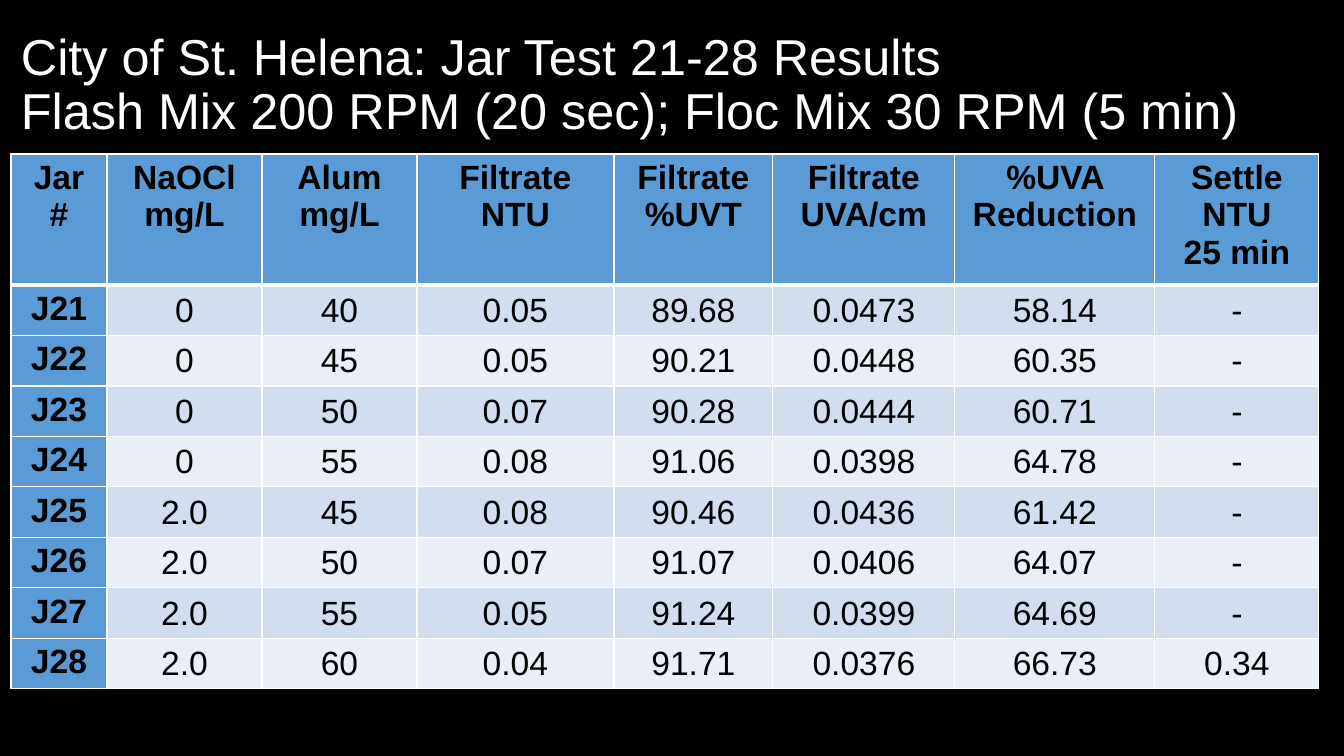
from lxml import etree
from pptx import Presentation
from pptx import util as u
from pptx.dml.color import RGBColor
from pptx.enum import text
from pptx.oxml.ns import qn

TITLE = ("City of St. Helena: Jar Test 21-28 Results\v"
         "Flash Mix 200 RPM (20 sec); Floc Mix 30 RPM (5 min)")
HEADERS = ("Jar\n#", "NaOCl\nmg/L", "Alum\nmg/L", "Filtrate\nNTU", "Filtrate\n%UVT",
           "Filtrate\nUVA/cm", "%UVA Reduction", "Settle\nNTU\n25 min")
RESULTS = [
    ("J21", "0", "40", "0.05", "89.68", "0.0473", "58.14", "-"),
    ("J22", "0", "45", "0.05", "90.21", "0.0448", "60.35", "-"),
    ("J23", "0", "50", "0.07", "90.28", "0.0444", "60.71", "-"),
    ("J24", "0", "55", "0.08", "91.06", "0.0398", "64.78", "-"),
    ("J25", "2.0", "45", "0.08", "90.46", "0.0436", "61.42", "-"),
    ("J26", "2.0", "50", "0.07", "91.07", "0.0406", "64.07", "-"),
    ("J27", "2.0", "55", "0.05", "91.24", "0.0399", "64.69", "-"),
    ("J28", "2.0", "60", "0.04", "91.71", "0.0376", "66.73", "0.34"),
]
COLUMN_WIDTHS = (96, 155, 155, 197, 159, 182, 200, 164)
HEADER_HEIGHT, ROW_HEIGHT = 122, 47
TITLE_BOX = (11, 13, 1290, 146)
TABLE_LEFT, TABLE_TOP = 11, 154

FONT = "Arial"
BLACK = RGBColor(0x00, 0x00, 0x00)
WHITE = RGBColor(0xFF, 0xFF, 0xFF)
BLUE = RGBColor(0x5B, 0x9B, 0xD5)
BANDS = (RGBColor(0xD2, 0xDE, 0xEF), RGBColor(0xEA, 0xEF, 0xF7))


def px(length):
    return u.Inches(length / 100.8)


def style_runs(frame, size, color, bold=False):
    for paragraph in frame.paragraphs:
        for run in paragraph.runs:
            run.font.name = FONT
            run.font.size = u.Pt(size)
            run.font.bold = bold
            run.font.color.rgb = color


def set_borders(cell, top, bottom):
    properties = cell._tc.get_or_add_tcPr()
    for side, points in (("lnL", 1), ("lnR", 1), ("lnT", top), ("lnB", bottom)):
        line = etree.SubElement(properties, qn(f"a:{side}"), w=str(u.Pt(points)))
        fill = etree.SubElement(line, qn("a:solidFill"))
        etree.SubElement(fill, qn("a:srgbClr"), val=str(WHITE))


def add_title(slide):
    frame = slide.shapes.add_textbox(*map(px, TITLE_BOX)).text_frame
    frame.word_wrap = True
    frame.vertical_anchor = text.MSO_ANCHOR.MIDDLE
    frame.text = TITLE
    frame.paragraphs[0].line_spacing = 0.9
    style_runs(frame, 36, WHITE)


def fill_cell(cell, value, row, column):
    is_label = row == 0 or column == 0
    cell.text_frame.text = value
    for paragraph in cell.text_frame.paragraphs:
        paragraph.alignment = text.PP_ALIGN.CENTER
    style_runs(cell.text_frame, 24, BLACK, bold=is_label)
    if not is_label:
        cell.vertical_anchor = text.MSO_ANCHOR.MIDDLE
        cell.margin_left = cell.margin_right = cell.margin_top = px(1)
        cell.margin_bottom = 0
    set_borders(cell, top=3 if row == 1 else 1, bottom=3 if row == 0 else 1)
    cell.fill.solid()
    cell.fill.fore_color.rgb = BLUE if is_label else BANDS[(row - 1) % 2]


def add_results(slide):
    rows = [HEADERS, *RESULTS]
    heights = [HEADER_HEIGHT] + [ROW_HEIGHT] * len(RESULTS)
    table = slide.shapes.add_table(
        len(rows), len(HEADERS), px(TABLE_LEFT), px(TABLE_TOP),
        px(sum(COLUMN_WIDTHS)), px(sum(heights))).table
    table.first_col = True
    for column, width in zip(table.columns, COLUMN_WIDTHS):
        column.width = px(width)
    for row, (values, height) in enumerate(zip(rows, heights)):
        table.rows[row].height = px(height)
        for column, value in enumerate(values):
            fill_cell(table.cell(row, column), value, row, column)


def main():
    presentation = Presentation()
    presentation.slide_width, presentation.slide_height = px(1344), px(756)
    slide = presentation.slides.add_slide(presentation.slide_layouts[6])
    slide.background.fill.solid()
    slide.background.fill.fore_color.rgb = BLACK
    add_title(slide)
    add_results(slide)
    presentation.save("out.pptx")


if __name__ == "__main__":
    main()
